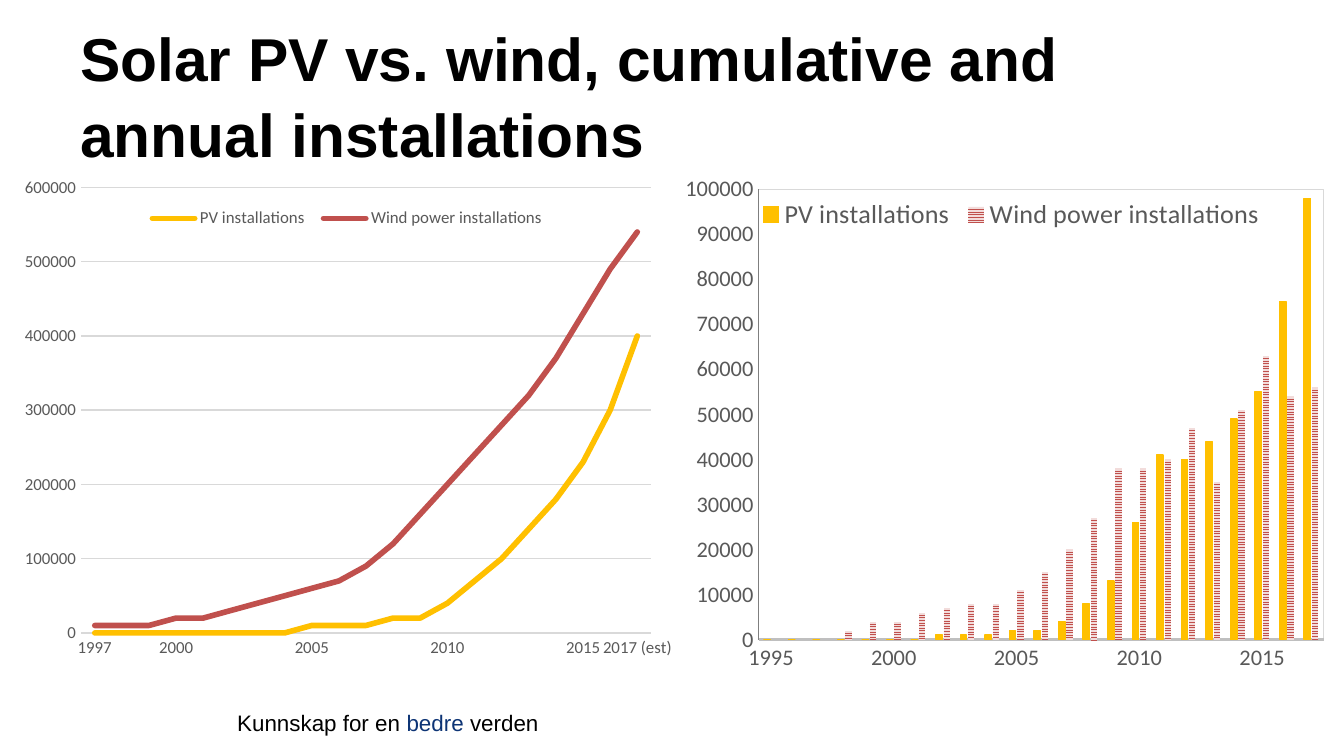
from lxml import etree
from pptx import Presentation
from pptx.chart.data import CategoryChartData
from pptx.dml.color import RGBColor
from pptx.enum.chart import XL_CHART_TYPE as ChartType, XL_LEGEND_POSITION as LegendPos
from pptx.enum.chart import XL_TICK_MARK as Tick
from pptx.enum.dml import MSO_PATTERN as Pattern
from pptx.enum.text import MSO_ANCHOR as Anchor
from pptx.oxml import parse_xml
from pptx.oxml.ns import nsdecls, qn
from pptx.util import Pt

PX = 6804  # EMU per pixel at 134.4 px to the inch
COLORS = {"text": "000000", "accent": "0D3475", "label": "595959", "grid": "D9D9D9",
          "base": "BFBFBF", "axis": "7F7F7F", "pv": "FFC000", "wind": "C0504D", "pale": "F2DCDB"}

TITLE = [("Solar PV vs. wind, cumulative and annual installations", "text")]
SLOGAN = [("Kunnskap for en ", "text"), ("bedre ", "accent"), ("verden", "text")]
NAMES = ("PV installations", "Wind power installations")

CUMULATIVE = dict(
    kind=ChartType.LINE, box=(0, 176, 694, 499), top=600000, step=100000,
    first=1997, count=21, labels={1997: "1997", 2000: "2000", 2005: "2005", 2010: "2010",
                                  2015: "2015", 2017: "2017 (est)"},
    values=([0] * 8 + [10000, 10000, 10000, 20000, 20000, 40000, 70000, 100000, 140000,
                       180000, 230000, 300000, 400000],
            [10000, 10000, 10000, 20000, 20000, 30000, 40000, 50000, 60000, 70000, 90000,
             120000, 160000, 200000, 240000, 280000, 320000, 370000, 430000, 490000, 540000]),
    plot=(0.117, 0.023, 0.821, 0.893), key=(0.2, 0.06, 0.6, 0.05),
    legend=LegendPos.BOTTOM, axis_size=9, legend_size=9, base=("grid", 0.75))
ANNUAL = dict(
    kind=ChartType.COLUMN_CLUSTERED, box=(665, 176, 679, 499), top=100000, step=10000,
    first=1995, count=23, labels={year: str(year) for year in range(1995, 2016, 5)},
    values=([0] * 7 + [1000, 1000, 1000, 2000, 2000, 4000, 8000, 13000, 26000, 41000,
                       40000, 44000, 49000, 55000, 75000, 98000],
            [None] * 3 + [2000, 4000, 4000, 6000, 7000, 8000, 8000, 11000, 15000, 20000,
                          27000, 38000, 38000, 40000, 47000, 35000, 51000, 63000, 54000, 56000]),
    plot=(0.138, 0.021, 0.832, 0.908), key=(0.13, 0.04, 0.76, 0.06),
    legend=LegendPos.TOP, axis_size=12, legend_size=14, base=("base", 1.5))


def rgb(name):
    return RGBColor.from_string(COLORS[name])


def emu(box):
    return [n * PX for n in box]


def set_font(font, **values):
    for name, value in values.items():
        if name == "color":
            font.color.rgb = rgb(value)
        else:
            setattr(font, name, value)


def set_line(line, color, width):
    line.color.rgb = rgb(color)
    line.width = Pt(width)


def add_text(slide, box, runs, anchor=Anchor.TOP, spacing=1.0, **font):
    frame = slide.shapes.add_textbox(*emu(box)).text_frame
    frame.word_wrap = True
    frame.vertical_anchor = anchor
    paragraph = frame.paragraphs[0]
    paragraph.line_spacing = spacing
    for words, color in runs:
        run = paragraph.add_run()
        run.text = words
        set_font(run.font, name="Arial", color=color, **font)


def place(parent, index, box, inner=False):
    """Give a plot area or a legend a manual layout, in fractions of the chart."""
    for old in parent.findall(qn("c:layout")):
        parent.remove(old)
    layout = parse_xml(f"<c:layout {nsdecls('c')}><c:manualLayout/></c:layout>")
    parts = [("layoutTarget", "inner")] if inner else []
    parts += [("xMode", "edge"), ("yMode", "edge"), *zip("xywh", box)]
    for tag, value in parts:
        etree.SubElement(layout[0], qn(f"c:{tag}")).set("val", str(value))
    parent.insert(index, layout)


def add_chart(slide, info):
    data = CategoryChartData()
    data.categories = [info["labels"].get(info["first"] + i, "") for i in range(info["count"])]
    for name, values in zip(NAMES, info["values"]):
        data.add_series(name, values)
    chart = slide.shapes.add_chart(info["kind"], *emu(info["box"]), data).chart
    chart.has_title = False
    set_font(chart.font, name="Calibri", size=Pt(10), color="text")

    years, amounts = chart.category_axis, chart.value_axis
    for axis in (years, amounts):
        axis.major_tick_mark = axis.minor_tick_mark = Tick.NONE
        axis.has_major_gridlines = False
        set_font(axis.tick_labels.font, name="Calibri", size=Pt(info["axis_size"]), color="label")
    set_line(years.format.line, *info["base"])
    years._element.find(qn("c:txPr")).find(qn("a:bodyPr")).set("rot", "-60000000")
    years._element.find(qn("c:noMultiLvlLbl")).addprevious(
        parse_xml(f'<c:tickLblSkip {nsdecls("c")} val="1"/>'))
    amounts.minimum_scale, amounts.maximum_scale = 0, info["top"]
    amounts.major_unit = info["step"]
    amounts.tick_labels.number_format = "General"
    amounts.tick_labels.number_format_is_linked = False

    chart.has_legend = True
    legend = chart.legend
    legend.position = info["legend"]
    legend.include_in_layout = False
    set_font(legend.font, name="Calibri", size=Pt(info["legend_size"]), color="label")
    place(legend._element, 1, info["key"])
    place(chart._chartSpace.chart.plotArea, 0, info["plot"], inner=True)
    return chart


def style_lines(chart):
    chart.value_axis.has_major_gridlines = True
    set_line(chart.value_axis.major_gridlines.format.line, "grid", 0.75)
    chart.value_axis.format.line.fill.background()
    for series, color in zip(chart.plots[0].series, ("pv", "wind")):
        series.smooth = False
        set_line(series.format.line, color, 3)
        series._element.spPr.find(qn("a:ln")).set("cap", "rnd")


def style_columns(chart):
    set_line(chart.value_axis.format.line, "axis", 0.75)
    plot = chart.plots[0]
    plot.vary_by_categories = False
    plot.gap_width, plot.overlap = 164, -22
    pv, wind = plot.series
    pv.format.fill.solid()
    pv.format.fill.fore_color.rgb = rgb("pv")
    set_line(pv.format.line, "pv", 0.75)
    fill = wind.format.fill
    fill.patterned()
    fill.pattern = Pattern.NARROW_HORIZONTAL
    fill.fore_color.rgb, fill.back_color.rgb = rgb("wind"), rgb("pale")
    wind.format.line.fill.background()
    chart._chartSpace.chart.plotArea.append(parse_xml(
        f'<c:spPr {nsdecls("c", "a")}><a:noFill/><a:ln w="9525"><a:solidFill>'
        f'<a:srgbClr val="{COLORS["grid"]}"/></a:solidFill></a:ln></c:spPr>'))


def main():
    deck = Presentation()
    deck.slide_width, deck.slide_height = emu((1344, 756))
    slide = deck.slides.add_slide(deck.slide_layouts[6])
    add_text(slide, (224, 703, 331, 40), SLOGAN, size=Pt(12))
    add_text(slide, (67, 31, 1210, 126), TITLE, Anchor.MIDDLE, 1.04, size=Pt(32.4), bold=True)
    style_lines(add_chart(slide, CUMULATIVE))
    style_columns(add_chart(slide, ANNUAL))
    deck.save("out.pptx")


if __name__ == "__main__":
    main()
